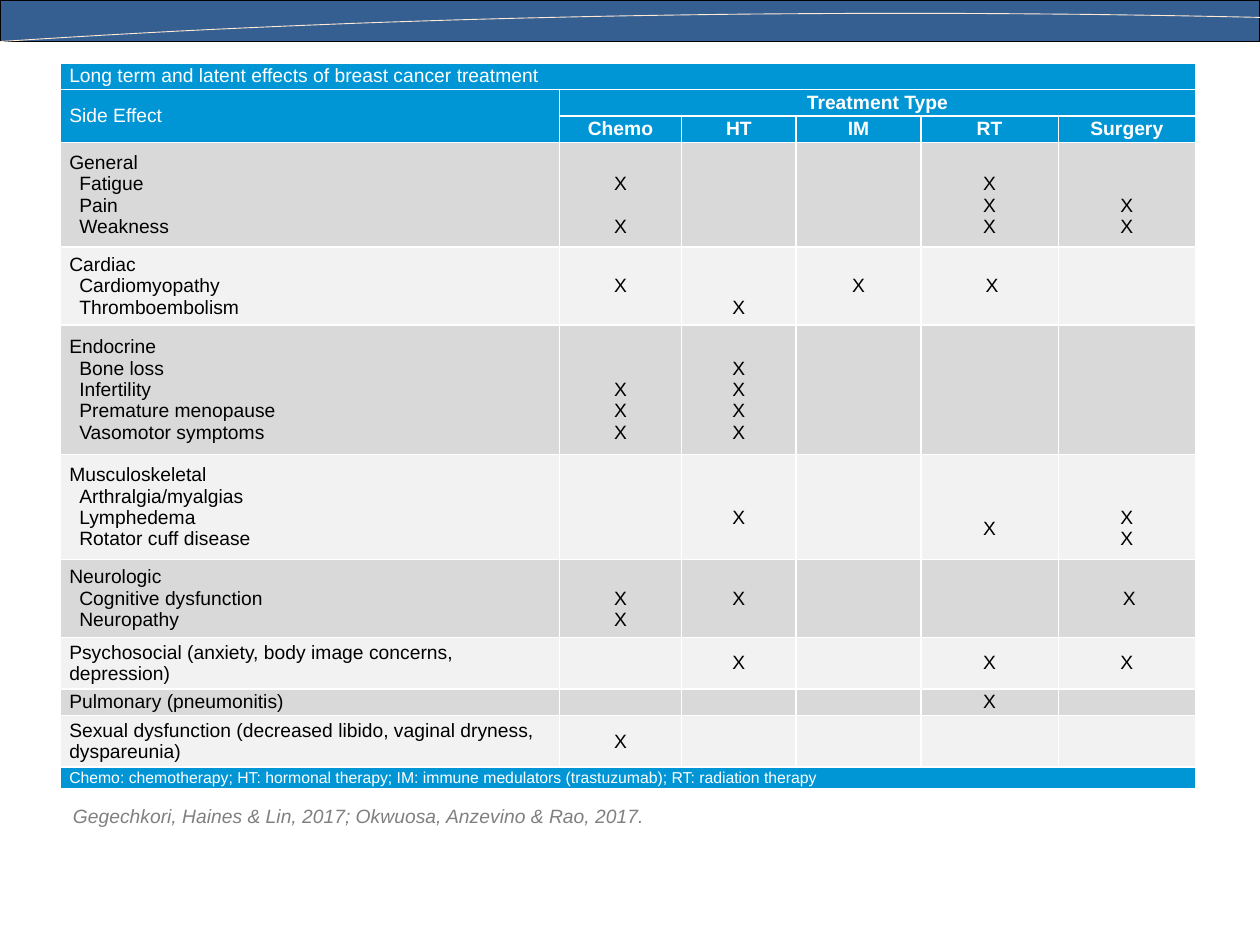
from lxml.etree import SubElement
from pptx import Presentation
from pptx.dml.color import RGBColor
from pptx.enum.shapes import MSO_SHAPE
from pptx.enum.text import MSO_ANCHOR, PP_ALIGN
from pptx.oxml.ns import qn
from pptx.util import Inches, Pt

COLORS = {"band": "365F91", "arc": "FFEAD5", "header": "0096D6", "dark": "D9D9D9",
          "light": "F2F2F2", "white": "FFFFFF", "black": "000000", "citation": "808080"}
LINE_HEIGHT = 0.17
SIDE_MARGIN = 0.07
COLUMN_WIDTHS = [3.96, 0.97, 0.91, 0.99, 1.09, 1.09]
ROW_HEIGHTS = [0.21, 0.21, 0.21, 0.83, 0.62, 1.03, 0.83, 0.62, 0.41, 0.21, 0.41, 0.17]
TREATMENTS = ["Chemo", "HT", "IM", "RT", "Surgery"]

# In a mark pattern, "-" is an unmarked line and ">" nudges the mark to the right.
EFFECTS = [
    (["General", "Fatigue", "Pain", "Weakness"], ["-X-X", "", "", "-XXX", "--XX"]),
    (["Cardiac", "Cardiomyopathy", "Thromboembolism"], ["X", "--X", "X", ">X", ""]),
    (["Endocrine", "Bone loss", "Infertility", "Premature menopause", "Vasomotor symptoms"],
     ["--XXX", "-XXXX", "", "", ""]),
    (["Musculoskeletal", "Arthralgia/myalgias", "Lymphedema", "Rotator cuff disease"],
     ["", "-X", "", "--X", "--XX"]),
    (["Neurologic", "Cognitive dysfunction", "Neuropathy"], ["-XX", "X", "", "", ">X"]),
    (["Psychosocial (anxiety, body image concerns, depression)"], ["", "X", "", "X", "X"]),
    (["Pulmonary (pneumonitis)"], ["", "", "", "X", ""]),
    (["Sexual dysfunction (decreased libido, vaginal dryness, dyspareunia)"],
     ["X", "", "", "", ""]),
]


def rgb(name):
    return RGBColor.from_string(COLORS[name])


def write_text(paragraph, text, size=11, color="black", bold=False, italic=False,
               align=PP_ALIGN.LEFT, indent=0, gap=0):
    paragraph.alignment = align
    if indent:
        paragraph._p.get_or_add_pPr().set("marL", str(Inches(indent)))
    if gap:
        paragraph.space_before = Inches(gap)
    run = paragraph.add_run()
    run.text = text
    run.font.name = "Arial"
    run.font.size = Pt(size)
    run.font.bold = bold
    run.font.italic = italic
    run.font.color.rgb = rgb(color)


def next_paragraph(frame, index):
    return frame.add_paragraph() if index else frame.paragraphs[0]


def add_band(slide, left, top, width, height):
    band = slide.shapes.add_shape(MSO_SHAPE.RECTANGLE, Inches(left), Inches(top),
                                  Inches(width), Inches(height))
    band.shadow.inherit = False
    band.fill.solid()
    band.fill.fore_color.rgb = rgb("band")
    band.line.color.rgb = rgb("black")
    band.line.width = Pt(0.75)

    controls = [(1, 0.42), (0.744, 0.24), (0.379, 0.24), (0, 1)]
    steps = 40
    points = []
    for step in range(steps + 1):
        t = step / steps
        weights = [(1 - t) ** 3, 3 * t * (1 - t) ** 2, 3 * t * t * (1 - t), t ** 3]
        x = sum(w * c[0] for w, c in zip(weights, controls))
        y = sum(w * c[1] for w, c in zip(weights, controls))
        points.append((Inches(left + x * width), Inches(top + y * height)))
    builder = slide.shapes.build_freeform(*points[0])
    builder.add_line_segments(points[1:], close=False)
    arc = builder.convert_to_shape()
    arc.shadow.inherit = False
    arc.fill.background()
    arc.line.color.rgb = rgb("arc")
    arc.line.width = Pt(0.5)


def style_cell(cell, fill):
    cell.vertical_anchor = MSO_ANCHOR.MIDDLE
    cell.margin_left = cell.margin_right = Inches(SIDE_MARGIN)
    cell.margin_top = cell.margin_bottom = 0
    properties = cell._tc.get_or_add_tcPr()
    for side in ("a:lnL", "a:lnR", "a:lnT", "a:lnB"):
        border = SubElement(properties, qn(side), w=str(Pt(1)))
        paint = SubElement(border, qn("a:solidFill"))
        SubElement(paint, qn("a:srgbClr"), val=COLORS["white"])
    cell.fill.solid()
    cell.fill.fore_color.rgb = rgb(fill)


def write_effect(cell, lines):
    for index, line in enumerate(lines):
        write_text(next_paragraph(cell.text_frame, index), line, indent=0.08 if index else 0)


def write_marks(cell, pattern):
    if pattern.startswith(">"):
        cell.margin_left = Inches(SIDE_MARGIN + 0.04)
    marked = [line for line, mark in enumerate(pattern.lstrip(">")) if mark == "X"]
    if marked:
        cell.margin_top = Inches(marked[0] * LINE_HEIGHT)
    for index, line in enumerate(marked):
        skipped = line - marked[index - 1] - 1 if index else 0
        write_text(next_paragraph(cell.text_frame, index), "X", align=PP_ALIGN.CENTER,
                   gap=skipped * LINE_HEIGHT)


def add_effects_table(slide, left, top, width, height):
    table = slide.shapes.add_table(len(ROW_HEIGHTS), len(COLUMN_WIDTHS), Inches(left),
                                   Inches(top), Inches(width), Inches(height)).table
    table.first_row = table.horz_banding = False
    for column, column_width in zip(table.columns, COLUMN_WIDTHS):
        column.width = Inches(column_width)
    for row, row_height in zip(table.rows, ROW_HEIGHTS):
        row.height = Inches(row_height)

    last_row, last_column = len(ROW_HEIGHTS) - 1, len(COLUMN_WIDTHS) - 1
    for row in range(last_row + 1):
        is_header = row < 3 or row == last_row
        fill = "header" if is_header else "dark" if row % 2 else "light"
        for column in range(last_column + 1):
            style_cell(table.cell(row, column), fill)

    for start, end in [((0, 0), (0, last_column)), ((1, 0), (2, 0)),
                       ((1, 1), (1, last_column)), ((last_row, 0), (last_row, last_column))]:
        table.cell(*start).merge(table.cell(*end))

    def write_header(row, column, text, **format_options):
        write_text(table.cell(row, column).text_frame.paragraphs[0], text, color="white",
                   **format_options)

    write_header(0, 0, "Long term and latent effects of breast cancer treatment")
    write_header(1, 0, "Side Effect")
    write_header(1, 1, "Treatment Type", bold=True, align=PP_ALIGN.CENTER)
    for column, treatment in enumerate(TREATMENTS, 1):
        write_header(2, column, treatment, bold=True, align=PP_ALIGN.CENTER)
    write_header(last_row, 0, "Chemo: chemotherapy; HT: hormonal therapy; "
                 "IM: immune medulators (trastuzumab); RT: radiation therapy", size=9)

    for row, (lines, patterns) in enumerate(EFFECTS, 3):
        write_effect(table.cell(row, 0), lines)
        for column, pattern in enumerate(patterns, 1):
            write_marks(table.cell(row, column), pattern)

    for cell in table.iter_cells():
        if not cell.text_frame.text:
            SubElement(cell.text_frame.paragraphs[0]._p, qn("a:endParaRPr"), sz="900")


def add_citation(slide, left, top, width, height):
    citation = slide.shapes.add_textbox(Inches(left), Inches(top), Inches(width), Inches(height))
    citation.text_frame.word_wrap = True
    write_text(citation.text_frame.paragraphs[0],
               "Gegechkori, Haines & Lin, 2017; Okwuosa, Anzevino & Rao, 2017.",
               color="citation", italic=True)


def main():
    presentation = Presentation()
    presentation.slide_width = Inches(10)
    presentation.slide_height = Inches(7.5)
    slide = presentation.slides.add_slide(presentation.slide_layouts[6])
    add_band(slide, 0, 0, 10, 0.33)
    add_citation(slide, 0.48, 6.33, 9.02, 0.29)
    add_effects_table(slide, 0.48, 0.5, 9.02, 5.75)
    presentation.save("out.pptx")


if __name__ == "__main__":
    main()
